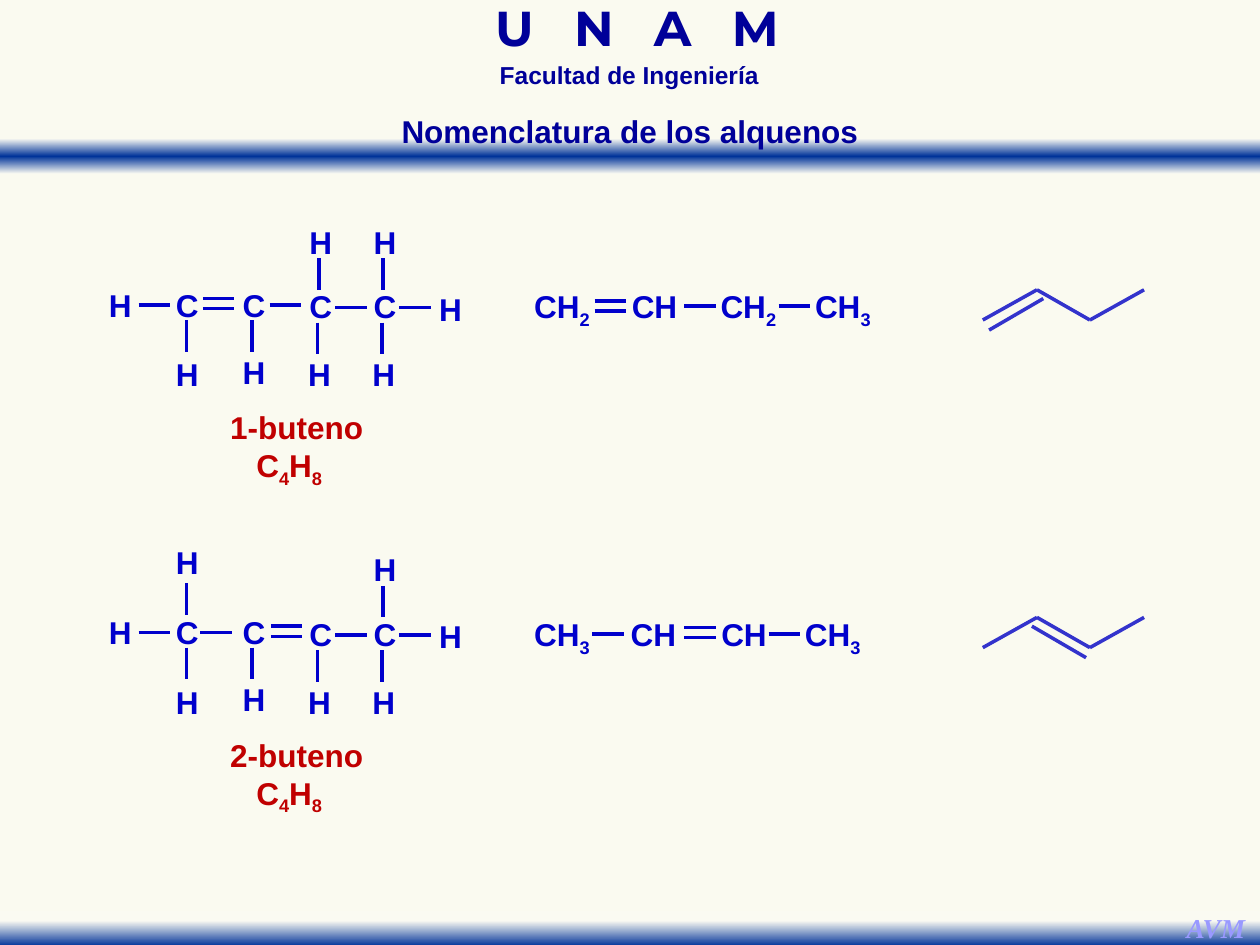
from lxml.etree import SubElement
from pptx import Presentation
from pptx.dml.color import RGBColor
from pptx.enum.shapes import MSO_CONNECTOR, MSO_SHAPE
from pptx.enum.text import MSO_ANCHOR, PP_ALIGN
from pptx.oxml.ns import qn
from pptx.util import Inches, Pt

COLORS = {
    "background": "FAFAF0", "band_edge": "FAFAF2", "band": "003399",
    "heading": "000099", "signature": "9999FF", "name": "C00000",
    "atom": "0000CC", "skeleton": "3333CC",
}

# Gradient bands: top, stops (percent, colour)
BANDS = [
    (1.1, [(0, "band_edge"), (50, "band"), (100, "band_edge")]),
    (7.23, [(28, "band_edge"), (100, "band")]),
]
# Text, left, top, width, height, format
HEADINGS = [
    ("U N A M", 3.1, 0.06, 3.91, 0.43,
     dict(size=28, font="Montserrat", line_spacing=0.7, tracking=7.6, wrap=True)),
    ("Facultad de Ingeniería", 3.21, 0.49, 3.57, 0.27,
     dict(size=14, line_spacing=0.7, wrap=True)),
    ("Nomenclatura de los alquenos", 3.07, 0.84, 3.86, 0.4, {}),
    ("AVM", 9.31, 7.18, 0.68, 0.37,
     dict(size=15.6, font="Times New Roman", color="signature", italic=True)),
]

# Parts that both isomers share; "_" makes the next character a subscript
BOND = 0.25
DOUBLE_GAP = 0.08
LABEL_HEIGHT = 0.4
LABEL_WIDTHS = {"C": 0.39, "H": 0.39, "CH": 0.57, "CH_2": 0.66, "CH_3": 0.66}
CHAIN = [
    ("H", 0.76, 2.22), ("C", 1.29, 2.22), ("C", 1.82, 2.22),
    ("C", 2.35, 2.23), ("C", 2.86, 2.23), ("H", 3.38, 2.25),
    ("H", 1.29, 2.77), ("H", 1.82, 2.75), ("H", 2.34, 2.77), ("H", 2.85, 2.77),
    ("H", 2.86, 1.72),
]
CHAIN_BONDS = [(1.1, 2.42, 1), (2.66, 2.44, 1), (3.17, 2.44, 1)]
HYDROGEN_BONDS = [(1.48, 2.54), (2, 2.54), (2.52, 2.56), (3.03, 2.56), (3.04, 2.05)]
ZIGZAG = [(7.8, 2.54), (8.23, 2.3), (8.65, 2.54), (9.08, 2.3)]
CONDENSED_TOP = 2.23

# Bonds are left, top, order
ISOMERS = [
    {
        "name": "1-buteno",
        "upper_hydrogen": ("H", 2.35, 1.72),
        "upper_bond": (2.53, 2.05),
        "bonds": [(1.61, 2.37, 2), (2.14, 2.42, 1)],
        "condensed": [("CH_2", 4.13), ("CH", 4.91), ("CH_2", 5.61), ("CH_3", 6.36)],
        "condensed_bonds": [(4.72, 2.39, 2), (5.43, 2.43, 1), (6.18, 2.43, 1)],
        "second_line": [(7.85, 2.62), (8.28, 2.37)],
    },
    {
        "name": "2-buteno",
        "upper_hydrogen": ("H", 1.29, 1.66),
        "upper_bond": (1.48, 2.03),
        "bonds": [(1.59, 2.42, 1), (2.15, 2.37, 2)],
        "condensed": [("CH_3", 4.13), ("CH", 4.9), ("CH", 5.62), ("CH_3", 6.28)],
        "condensed_bonds": [(4.7, 2.43, 1), (5.43, 2.38, 2), (6.1, 2.43, 1)],
        "second_line": [(8.19, 2.37), (8.62, 2.62)],
    },
]
ISOMER_STEP = 2.6


def rgb(name):
    return RGBColor.from_string(COLORS[name])


def add_text(shapes, text, left, top, width, height, *, size=18, font="Arial",
             color="heading", italic=False, line_spacing=None, tracking=0,
             wrap=False):
    box = shapes.add_textbox(Inches(left), Inches(top), Inches(width), Inches(height))
    frame = box.text_frame
    frame.word_wrap = wrap
    frame.vertical_anchor = MSO_ANCHOR.TOP
    paragraph = frame.paragraphs[0]
    paragraph.alignment = PP_ALIGN.CENTER
    if line_spacing:
        paragraph.line_spacing = line_spacing
    first, *rest = text.split("_")
    pieces = [(first, False)]
    for part in rest:
        pieces += [(part[:1], True), (part[1:], False)]
    for piece, subscript in pieces:
        if not piece:
            continue
        run = paragraph.add_run()
        run.text = piece
        run.font.size = Pt(size)
        run.font.name = font
        run.font.bold = True
        run.font.italic = italic
        run.font.color.rgb = rgb(color)
        properties = run._r.get_or_add_rPr()
        if subscript:
            properties.set("baseline", "-25000")
        if tracking:
            properties.set("spc", str(round(tracking * 100)))


def add_band(shapes, top, stops):
    band = shapes.add_shape(MSO_SHAPE.RECTANGLE, 0, Inches(top), Inches(10), Inches(0.28))
    band.shadow.inherit = False
    band.line.fill.background()
    band.fill.gradient()
    band.fill.gradient_angle = 270
    stop_list = band._element.spPr.find(qn("a:gradFill")).find(qn("a:gsLst"))
    for old_stop in list(stop_list):
        stop_list.remove(old_stop)
    for percent, color in stops:
        stop = SubElement(stop_list, qn("a:gs"), pos=str(percent * 1000))
        SubElement(stop, qn("a:srgbClr"), val=COLORS[color])


def add_line(shapes, start, end, offset, color="atom"):
    (x1, y1), (x2, y2) = start, end
    line = shapes.add_connector(MSO_CONNECTOR.STRAIGHT, Inches(x1), Inches(y1 + offset),
                                Inches(x2), Inches(y2 + offset))
    line.line.color.rgb = rgb(color)
    line.line.width = Pt(2)
    SubElement(line._element.spPr, qn("a:effectLst"))


def add_bonds(shapes, bonds, offset):
    for left, top, order in bonds:
        for i in range(order):
            y = top + i * DOUBLE_GAP
            add_line(shapes, (left, y), (left + BOND, y), offset)


def add_labels(shapes, labels, offset):
    for text, left, top in labels:
        add_text(shapes, text, left, top + offset, LABEL_WIDTHS[text], LABEL_HEIGHT,
                 color="atom")


def add_isomer(shapes, isomer, offset):
    add_text(shapes, isomer["name"], 1.72, 3.19 + offset, 1.27, LABEL_HEIGHT, color="name")
    add_text(shapes, "C_4H_8", 1.92, 3.49 + offset, 0.75, LABEL_HEIGHT, color="name")

    expanded = shapes.add_group_shape().shapes
    add_labels(expanded, CHAIN + [isomer["upper_hydrogen"]], offset)
    add_bonds(expanded, CHAIN_BONDS + isomer["bonds"], offset)
    for x, y in HYDROGEN_BONDS + [isomer["upper_bond"]]:
        add_line(expanded, (x, y), (x, y + BOND), offset)

    condensed = shapes.add_group_shape().shapes
    add_labels(condensed, [(text, left, CONDENSED_TOP) for text, left in isomer["condensed"]],
               offset)
    add_bonds(condensed, isomer["condensed_bonds"], offset)

    skeleton = shapes.add_group_shape().shapes
    for start, end in [*zip(ZIGZAG, ZIGZAG[1:]), isomer["second_line"]]:
        add_line(skeleton, start, end, offset, color="skeleton")


def main():
    deck = Presentation()
    deck.slide_width, deck.slide_height = Inches(10), Inches(7.5)
    slide = deck.slides.add_slide(deck.slide_layouts[6])
    slide.background.fill.solid()
    slide.background.fill.fore_color.rgb = rgb("background")
    for top, stops in BANDS:
        add_band(slide.shapes, top, stops)
    for text, left, top, width, height, style in HEADINGS:
        add_text(slide.shapes, text, left, top, width, height, **style)
    for i, isomer in enumerate(ISOMERS):
        add_isomer(slide.shapes, isomer, i * ISOMER_STEP)
    deck.save("out.pptx")


if __name__ == "__main__":
    main()
